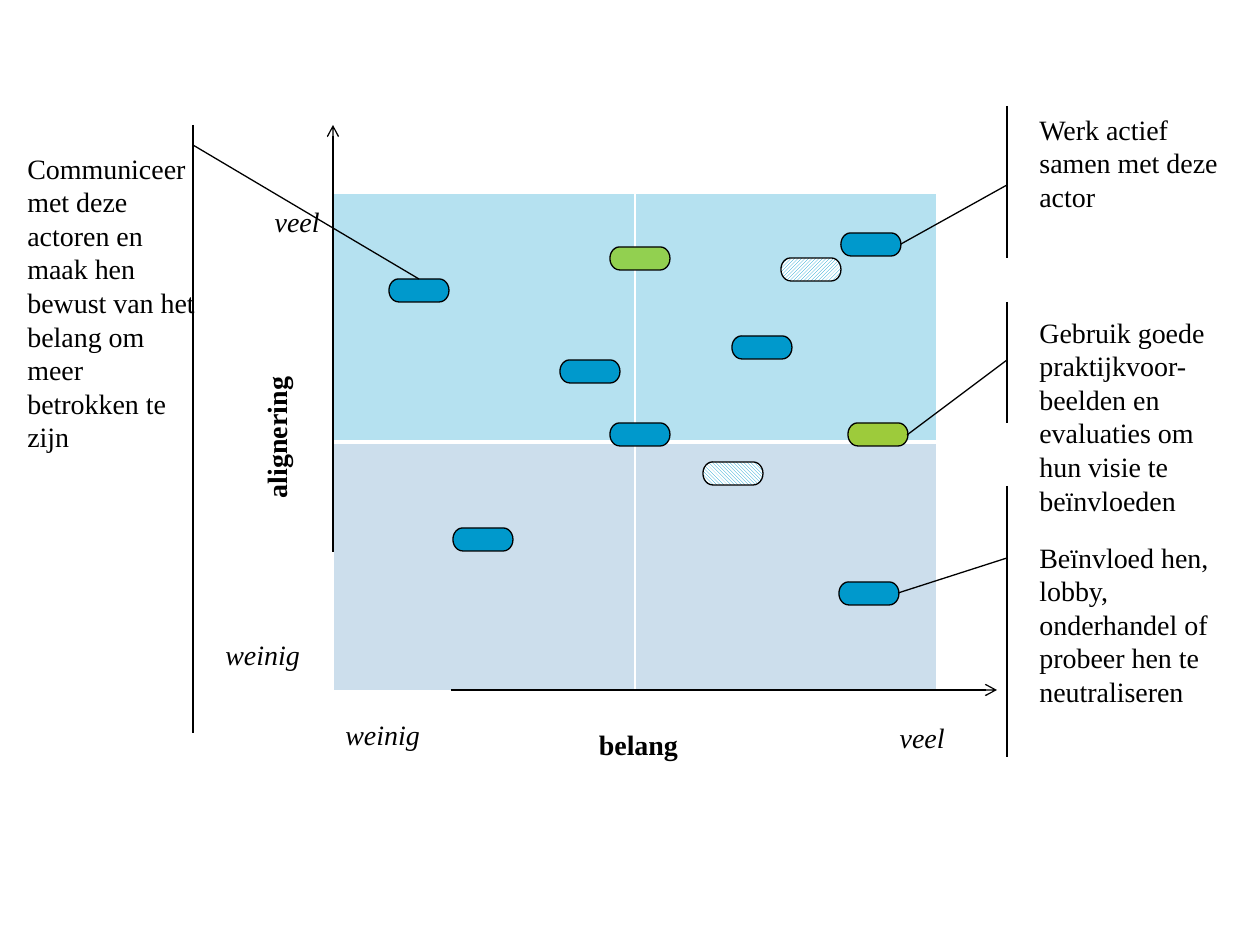
from lxml.etree import SubElement
from pptx import Presentation
from pptx.dml.color import RGBColor
from pptx.enum.dml import MSO_PATTERN
from pptx.enum.shapes import MSO_CONNECTOR, MSO_SHAPE
from pptx.enum.text import MSO_AUTO_SIZE, PP_ALIGN
from pptx.oxml import parse_xml
from pptx.oxml.ns import nsdecls, qn
from pptx.util import Emu, Pt

SCALE = 914400 / 126
BLUE, LIME, OLIVE = "0099CC", "92D050", "9DCB3B"
UP, DOWN = MSO_PATTERN.DARK_UPWARD_DIAGONAL, MSO_PATTERN.DARK_DOWNWARD_DIAGONAL
LEFT, MID, RIGHT = PP_ALIGN.LEFT, PP_ALIGN.CENTER, PP_ALIGN.RIGHT

ACTORS = [
    (389, 279, BLUE), (703, 462, DOWN), (839, 582, BLUE), (732, 336, BLUE),
    (781, 258, UP), (841, 233, BLUE), (610, 247, LIME), (453, 528, BLUE),
    (560, 360, BLUE), (610, 423, BLUE), (848, 423, OLIVE),
]
AXES = [(333, 552, 333, 125), (451, 690, 997, 690)]
RULES = [
    (1007, 106, 1007, 258), (1007, 185, 901, 244),
    (193, 125, 193, 733), (193, 145, 419, 279),
    (1007, 486, 1007, 757), (1007, 558, 898, 593),
    (1007, 302, 1007, 423), (1007, 360, 907, 435),
]
SCALES = [
    ("veel", 811, 714, 146, RIGHT), ("weinig", 333, 711, 110, LEFT),
    ("weinig", 213, 631, 110, LEFT), ("veel", 193, 198, 139, RIGHT),
]
NOTES = [
    ("Werk actief samen met deze actor", 1027, 106, 208, 115),
    ("Communiceer met deze actoren en maak hen bewust van het belang om meer "
     "betrokken te zijn", 15, 145, 198, 318),
    ("Beïnvloed hen, lobby, onderhandel of probeer hen te neutraliseren",
     1027, 534, 208, 183),
    ("Gebruik goede praktijkvoor-beelden en evaluaties om hun visie te "
     "beïnvloeden", 1027, 309, 208, 217),
]


def px(*nums):
    return [Emu(round(n * SCALE)) for n in nums]


def tint(code):
    return RGBColor.from_string(code)


def edge(cell, side, width):
    line = parse_xml(
        f'<a:ln{side} {nsdecls("a")} w="{Pt(width)}"><a:solidFill>'
        f'<a:srgbClr val="FFFFFF"/></a:solidFill></a:ln{side}>')
    cell._tc.get_or_add_tcPr().append(line)


def add_grid(slide):
    grid = slide.shapes.add_table(2, 2, *px(333, 193, 604, 498)).table
    for flag in ("first_row", "horz_banding"):
        setattr(grid, flag, False)
    for row, code in enumerate((BLUE, "CCDEEC")):
        for col in range(2):
            cell = grid.cell(row, col)
            wide = {"L": 1, "R": 1, "T": 3 if row else 1, "B": 1 if row else 3}
            for side, width in wide.items():
                edge(cell, side, width)
            cell.fill.solid()
            cell.fill.fore_color.rgb = tint(code)
            if row == 0:
                mark = cell._tc.tcPr.find(".//" + qn("a:solidFill") + "[last()]")
                mark = cell._tc.tcPr.findall(qn("a:solidFill"))[0][0]
                SubElement(mark, qn("a:alpha"), val="29000")


def add_line(slide, ends, arrow=False):
    line = slide.shapes.add_connector(MSO_CONNECTOR.STRAIGHT, *px(*ends))
    line.line.width = Pt(0.75)
    line.line.color.rgb = tint("000000")
    if arrow:
        SubElement(line.line._get_or_add_ln(), qn("a:tailEnd"), type="arrow")
    SubElement(line._element.spPr, qn("a:effectLst"))


def add_actor(slide, left, top, look):
    box = px(left, top, 60, 23)
    pill = slide.shapes.add_shape(MSO_SHAPE.FLOWCHART_TERMINATOR, *box)
    pill.shadow.inherit = False
    pill.line.width = Pt(0.75)
    pill.line.color.rgb = tint("000000")
    if look in (UP, DOWN):
        pill.fill.patterned()
        pill.fill.pattern = look
        pill.fill.fore_color.rgb = tint(BLUE)
        pill.fill.back_color.rgb = tint("FFFFFF")
    else:
        pill.fill.solid()
        pill.fill.fore_color.rgb = tint(look)


def add_text(slide, text, box, align=LEFT, turn=False, **style):
    frame = slide.shapes.add_textbox(*px(*box)).text_frame
    frame.word_wrap = True
    frame.auto_size = MSO_AUTO_SIZE.SHAPE_TO_FIT_TEXT
    if turn:
        frame._txBody.bodyPr.set("vert", "vert270")
    para = frame.paragraphs[0]
    para.alignment = align
    run = para.add_run()
    run.text = text
    look = {"name": "Times New Roman", "size": Pt(16), **style}
    for key, value in look.items():
        setattr(run.font, key, value)
    run.font.color.rgb = tint("000000")


def main():
    deck = Presentation()
    deck.slide_width, deck.slide_height = px(1260, 945)
    slide = deck.slides.add_slide(deck.slide_layouts[6])
    add_grid(slide)
    for ends in AXES:
        add_line(slide, ends, arrow=True)
    for text, left, top, width, align in SCALES:
        add_text(slide, text, (left, top, width, 47), align, italic=True)
    for actor in ACTORS:
        add_actor(slide, *actor)
    add_text(slide, "belang", (449, 721, 379, 47), MID, bold=True)
    add_text(slide, "alignering", (253, 244, 59, 387), MID, turn=True, bold=True)
    for ends in RULES:
        add_line(slide, ends)
    for text, *box in NOTES:
        add_text(slide, text, box)
    deck.save("out.pptx")


if __name__ == "__main__":
    main()
